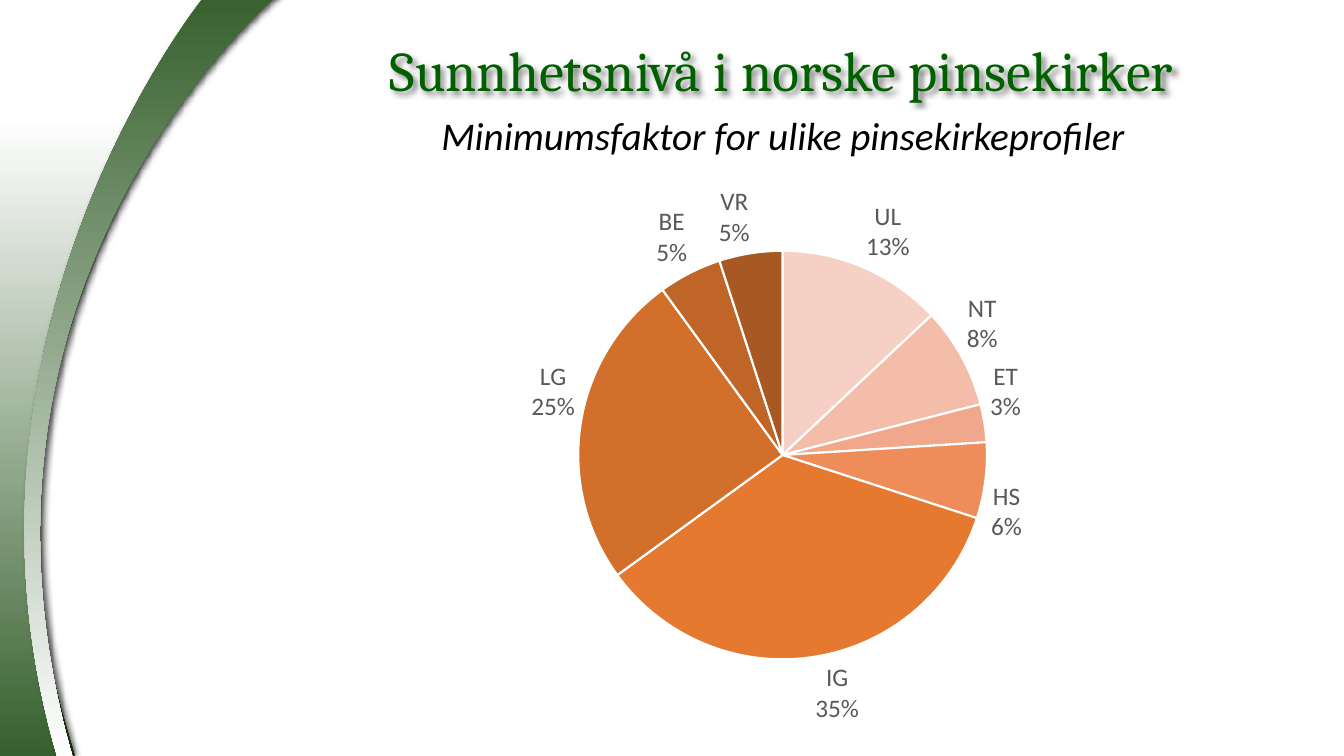
"""Build a slide with a green arc and a pie chart of minimum factors."""
from lxml.etree import SubElement
from pptx import Presentation
from pptx.chart.data import CategoryChartData
from pptx.dml.color import RGBColor
from pptx.enum.chart import XL_CHART_TYPE, XL_LABEL_POSITION
from pptx.enum.text import MSO_ANCHOR, PP_ALIGN
from pptx.oxml import parse_xml
from pptx.oxml.ns import nsdecls, qn
from pptx.util import Inches, Pt


def color(code):
    return RGBColor.from_string(code)


def shade(shape, alpha, blur, dist, angle):
    effects = shape.element.spPr.find(qn("a:effectLst"))
    cast = SubElement(effects, qn("a:outerShdw"), blurRad=str(Pt(blur)),
                      dist=str(Pt(dist)), dir=str(angle * 60000), algn="tl", rotWithShape="0")
    black = SubElement(cast, qn("a:srgbClr"), val="000000")
    SubElement(black, qn("a:alpha"), val=str(alpha * 1000))


deck = Presentation()
deck.slide_width, deck.slide_height = Inches(13.33), Inches(7.5)
slide = deck.slides.add_slide(deck.slide_layouts[5])

swoops = [
    ([(0, 1.17), (0.74, 1.17), (0.47, 1.17), (1.71, 1.17),
      (-0.38, 4.32), (0.57, 6.89), (0.74, 7.5),
      (0.37, 7.5), (0, 7.5), (0, 7.5),
      (-0.12, 6.44), (0, 1.17), (0, 1.17)], ("FFFFFF", "36602D")),
    ([(0.57, 7.51), (0.64, 7.51), (0.72, 7.51), (0.72, 7.51),
      (-0.65, 2.73), (2.78, -0.07), (2.78, -0.07),
      (2.78, -0.07), (2.06, -0.08), (2.06, -0.08),
      (2.06, -0.08), (-0.68, 3.26), (0.57, 7.51)], ("36602D", "FFFFFF")),
]
for points, tones in swoops:
    grid = [(round(x * 100), round(y * 100)) for x, y in points]
    pen = slide.shapes.build_freeform(*grid[0], scale=Inches(0.01))
    pen.add_line_segments(grid[1:], close=True)
    swoop = pen.convert_to_shape()
    knots = list(swoop.element.iter(qn("a:lnTo")))
    for first in range(0, len(knots), 3):
        curve = parse_xml(f"<a:cubicBezTo {nsdecls('a')}/>")
        knots[first].addprevious(curve)
        for knot in knots[first:first + 3]:
            curve.append(knot[0])
            knot.getparent().remove(knot)
    swoop.fill.gradient()
    swoop.fill.gradient_angle = 270
    for stop, tone in zip(swoop.fill.gradient_stops, tones):
        stop.color.rgb = color(tone)
    swoop.line.fill.background()
    swoop.shadow.inherit = False
shade(swoop, 75, 5, 3, 0)

title = slide.shapes.title
title.left, title.top = Inches(3.28), Inches(-0.34)
title.width, title.height = Inches(8.94), Inches(2.05)
title.fill.background()
title.shadow.inherit = False
shade(title, 50, 4, 3, 45)
frame = title.text_frame
frame.word_wrap = True
frame.vertical_anchor = MSO_ANCHOR.MIDDLE
head = frame.paragraphs[0]
head.text = "Sunnhetsnivå i norske pinsekirker"
head.alignment = PP_ALIGN.CENTER
head.font.size = Pt(40)
head.font.name = "Cambria"
head.font.color.rgb = color("006000")

box = slide.shapes.add_textbox(Inches(3.75), Inches(1.06), Inches(8.03), Inches(0.57))
box.text_frame.word_wrap = True
line = box.text_frame.paragraphs[0]
line.text = "Minimumsfaktor for ulike pinsekirkeprofiler"
line.alignment = PP_ALIGN.CENTER
line.font.size = Pt(28)
line.font.name = "Calibri"
line.font.italic = True
line.font.color.rgb = color("000000")

slices = [
    ("UL", 13, "F7D0C5"), ("NT", 8, "F4BDAA"), ("ET", 3, "F1A78B"), ("HS", 6, "EE8C5A"),
    ("IG", 35, "E5792F"), ("LG", 25, "D26F2B"), ("BE", 5, "BF6528"), ("VR", 5, "A75823"),
]
data = CategoryChartData()
data.categories = [name for name, share, tone in slices]
data.add_series("Series 1", [share for name, share, tone in slices])
chart = slide.shapes.add_chart(XL_CHART_TYPE.PIE, Inches(4.07), Inches(1.7),
                               Inches(7.24), Inches(5.63), data).chart
chart.has_legend = False
chart.has_title = False
chart.font.name = "Calibri"
chart.font.size = Pt(16)
chart.font.color.rgb = color("000000")
plot = chart.plots[0]
plot.vary_by_categories = True
for spot, (name, share, tone) in enumerate(slices):
    wedge = plot.series[0].points[spot].format
    wedge.fill.solid()
    wedge.fill.fore_color.rgb = color(tone)
    wedge.line.color.rgb = color("FFFFFF")
    wedge.line.width = Pt(1.5)

labels = plot.series[0].data_labels
labels.show_value = False
labels.show_category_name = True
labels.show_percentage = True
labels.number_format = "0%"
labels.number_format_is_linked = False
labels.position = XL_LABEL_POSITION.OUTSIDE_END
labels.font.name = "Calibri"
labels.font.size = Pt(18)
labels.font.color.rgb = color("595959")
gap = parse_xml(f"<c:separator {nsdecls('c')}>\n</c:separator>")
labels._element.find(qn("c:showBubbleSize")).addnext(gap)

area = chart._chartSpace.chart.plotArea
for old in area.findall(qn("c:layout")):
    area.remove(old)
layout = parse_xml(f"<c:layout {nsdecls('c')}><c:manualLayout/></c:layout>")
rules = [("layoutTarget", "inner"), ("xMode", "edge"), ("yMode", "edge"),
         ("x", "0.23"), ("y", "0.14"), ("w", "0.56"), ("h", "0.72")]
for tag, value in rules:
    SubElement(layout[0], qn(f"c:{tag}"), val=value)
area.insert(0, layout)

deck.save("out.pptx")
